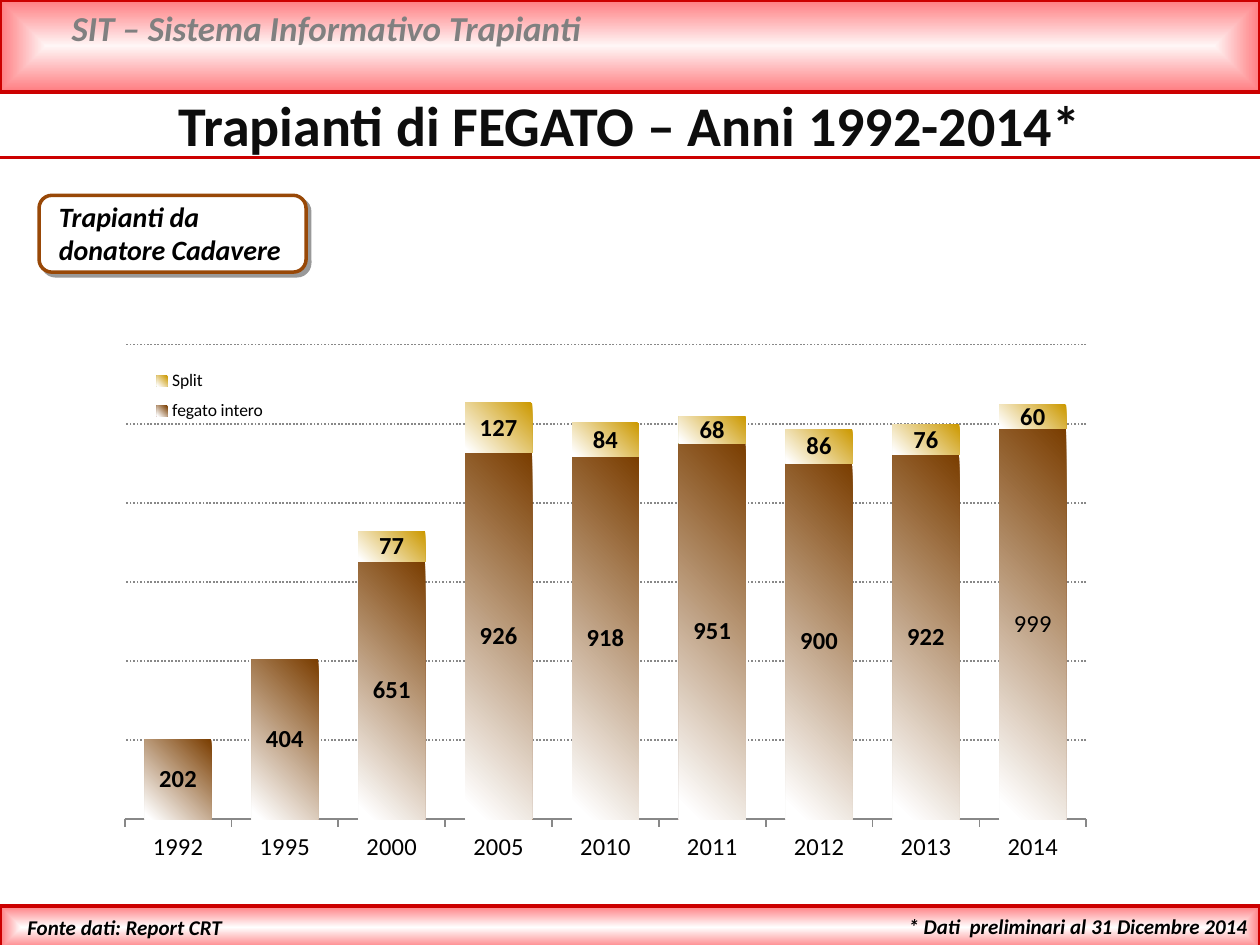
from dataclasses import dataclass

from lxml import etree
from pptx import Presentation
from pptx.chart.data import CategoryChartData
from pptx.dml.color import RGBColor
from pptx.enum.chart import XL_CHART_TYPE, XL_LEGEND_POSITION, XL_TICK_LABEL_POSITION, XL_TICK_MARK
from pptx.enum.dml import MSO_LINE
from pptx.enum.shapes import MSO_CONNECTOR, MSO_SHAPE
from pptx.enum.text import MSO_ANCHOR, PP_ALIGN
from pptx.oxml import parse_xml
from pptx.oxml.ns import nsdecls, qn
from pptx.util import Pt

LEFT, CENTER, RIGHT = PP_ALIGN.LEFT, PP_ALIGN.CENTER, PP_ALIGN.RIGHT
RECTANGLE, ROUNDED = MSO_SHAPE.RECTANGLE, MSO_SHAPE.ROUNDED_RECTANGLE
WIDTH, HEIGHT = 720, 540


@dataclass(frozen=True)
class Theme:
    font: str = "Calibri"
    black: str = "000000"
    white: str = "FFFFFF"
    title: str = "0D0D0D"
    heading: str = "808080"
    red: str = "CC0000"
    pink: str = "FF7C80"
    pale_pink: str = "FFF6F6"
    tag_line: str = "984807"
    grid: str = "888888"
    brown: str = "7A3D00"
    gold: str = "CC9900"
    title_size: int = 32
    heading_size: int = 20
    tag_size: int = 16
    label_size: int = 14
    note_size: int = 12
    legend_size: int = 10


@dataclass(frozen=True)
class Box:
    left: float
    top: float
    width: float
    height: float

    def lengths(self) -> tuple:
        return Pt(self.left), Pt(self.top), Pt(self.width), Pt(self.height)


@dataclass(frozen=True)
class Band:
    box: Box
    middle: str


@dataclass(frozen=True)
class Caption:
    text: str
    box: Box
    size: int
    color: str
    align: int = LEFT


@dataclass(frozen=True)
class Series:
    name: str
    values: tuple
    color: str


THEME = Theme()
BANDS = (
    Band(Box(0, 0, WIDTH, 52.5), THEME.pale_pink),
    Band(Box(0, 517.7, WIDTH, 24.5), THEME.white),
)
CAPTIONS = (
    Caption("SIT – Sistema Informativo Trapianti", Box(33.8, 0, 646.6, 31.7),
            THEME.heading_size, THEME.heading),
    Caption("* Dati  preliminari al 31 Dicembre 2014", Box(422.6, 518.4, 297.4, 21.6),
            THEME.note_size, THEME.black, RIGHT),
    Caption("Fonte dati: Report CRT", Box(8.6, 519.1, 231, 21.6),
            THEME.note_size, THEME.black),
    Caption("Trapianti da donatore Cadavere", Box(26.6, 110.2, 145.4, 46),
            THEME.tag_size, THEME.black),
)
YEARS = ("1992", "1995", "2000", "2005", "2010", "2011", "2012", "2013", "2014")
SERIES = (
    Series("fegato intero", (202, 404, 651, 926, 918, 951, 900, 922, 988), THEME.brown),
    Series("Split", (None, None, 77, 127, 84, 68, 86, 76, 60), THEME.gold),
)


def rgb(color: str) -> RGBColor:
    return RGBColor.from_string(color)


def style_font(font, size: int, color: str = THEME.black, bold: bool = False,
               italic: bool = False) -> None:
    font.name, font.size, font.bold, font.italic = THEME.font, Pt(size), bold, italic
    font.color.rgb = rgb(color)


def write_text(shape, text: str, *, size: int, color: str, align: int = LEFT,
               italic: bool = False, anchor=MSO_ANCHOR.TOP) -> None:
    frame = shape.text_frame
    frame.word_wrap, frame.vertical_anchor = True, anchor
    paragraph = frame.paragraphs[0]
    paragraph.alignment = align
    run = paragraph.add_run()
    run.text = text
    style_font(run.font, size, color, True, italic)


def style_line(line, color: str, width: float) -> None:
    line.color.rgb, line.width = rgb(color), Pt(width)


def fill_gradient(fill, start: str, end: str, end_position: float = 1) -> None:
    fill.gradient()
    fill.gradient_angle = 225
    for stop, color, position in zip(fill.gradient_stops, (start, end), (0, end_position)):
        stop.color.rgb, stop.position = rgb(color), position


def add_band(slide, band: Band) -> None:
    shape = slide.shapes.add_shape(RECTANGLE, *band.box.lengths())
    shape.shadow.inherit = False
    style_line(shape.line, THEME.red, 2)
    fill_gradient(shape.fill, band.middle, THEME.pink)
    # Spread the gradient from the centre of the band
    gradient = shape._element.spPr.find(qn("a:gradFill"))
    gradient.replace(gradient.find(qn("a:lin")), parse_xml(
        f'<a:path {nsdecls("a")} path="shape">'
        '<a:fillToRect l="50000" t="50000" r="50000" b="50000"/></a:path>'))


def add_rule(slide, top: float) -> None:
    rule = slide.shapes.add_connector(MSO_CONNECTOR.STRAIGHT, Pt(0), Pt(top), Pt(WIDTH), Pt(top))
    style_line(rule.line, THEME.red, 2)
    etree.SubElement(rule._element.spPr, qn("a:effectLst"))


def add_tag(slide, box: Box) -> None:
    tag = slide.shapes.add_shape(ROUNDED, *box.lengths())
    tag.fill.solid()
    tag.fill.fore_color.rgb = rgb(THEME.white)
    style_line(tag.line, THEME.tag_line, 2)
    tag.shadow.inherit = False
    tag._element.spPr.find(qn("a:effectLst")).append(parse_xml(
        f'<a:outerShdw {nsdecls("a")} blurRad="0" dist="{Pt(3)}" dir="2700000" algn="tl" '
        f'rotWithShape="0"><a:srgbClr val="{THEME.black}"><a:alpha val="40000"/></a:srgbClr>'
        '</a:outerShdw>'))


def place_in_chart(element, index: int, area: Box, target: str = "") -> None:
    """Set a manual layout, in fractions of the chart."""
    for layout in element.findall(qn("c:layout")):
        element.remove(layout)
    element.insert(index, parse_xml(
        f'<c:layout {nsdecls("c")}><c:manualLayout>{target}'
        '<c:xMode val="edge"/><c:yMode val="edge"/>'
        f'<c:x val="{area.left}"/><c:y val="{area.top}"/>'
        f'<c:w val="{area.width}"/><c:h val="{area.height}"/></c:manualLayout></c:layout>'))


def add_transplant_chart(slide, box: Box) -> None:
    data = CategoryChartData()
    data.categories = YEARS
    for entry in SERIES:
        data.add_series(entry.name, entry.values)
    chart = slide.shapes.add_chart(XL_CHART_TYPE.COLUMN_STACKED, *box.lengths(), data).chart
    chart.has_title = False
    style_font(chart.font, THEME.legend_size)

    # Axes and gridlines
    years = chart.category_axis
    years.major_tick_mark, years.has_major_gridlines = XL_TICK_MARK.OUTSIDE, False
    years.tick_label_position = XL_TICK_LABEL_POSITION.LOW
    style_font(years.tick_labels.font, THEME.label_size)
    style_line(years.format.line, THEME.grid, 1)
    counts = chart.value_axis
    counts.minimum_scale, counts.maximum_scale, counts.major_unit = 0, 1200, 200
    counts.visible, counts.has_major_gridlines = False, True
    style_line(counts.major_gridlines.format.line, THEME.grid, 1)
    counts.major_gridlines.format.line.dash_style = MSO_LINE.ROUND_DOT

    # Columns and value labels
    plot = chart.plots[0]
    plot.gap_width, plot.overlap, plot.vary_by_categories = 60, 100, False
    for series, entry in zip(plot.series, SERIES):
        fill_gradient(series.format.fill, entry.color, THEME.white, 0.96)
        series.data_labels.show_value = True
        style_font(series.data_labels.font, THEME.label_size, bold=True)
    last_label = plot.series[0].points[len(YEARS) - 1].data_label.text_frame
    run = last_label.paragraphs[0].add_run()
    run.text = "999"
    style_font(run.font, THEME.label_size)

    # Legend over the plot
    chart.has_legend = True
    chart.legend.position = XL_LEGEND_POSITION.LEFT
    chart.legend.include_in_layout = True
    place_in_chart(chart.legend._element, 1, Box(0.04, 0.05, 0.13, 0.13))
    place_in_chart(chart._chartSpace.chart.plotArea, 0, Box(0.02, 0.02, 0.96, 0.88),
                   '<c:layoutTarget val="inner"/>')


def main() -> None:
    presentation = Presentation()
    presentation.slide_width, presentation.slide_height = Pt(WIDTH), Pt(HEIGHT)
    slide = presentation.slides.add_slide(presentation.slide_layouts[5])

    # Title
    title = slide.shapes.title
    title.left, title.top, title.width, title.height = Box(0, 48.2, WIDTH, 46).lengths()
    write_text(title, "Trapianti di FEGATO – Anni 1992-2014*", size=THEME.title_size,
               color=THEME.title, align=CENTER, anchor=MSO_ANCHOR.MIDDLE)

    # Frame, chart and tag
    for band in BANDS:
        add_band(slide, band)
    add_rule(slide, 90)
    add_transplant_chart(slide, Box(59.8, 190.8, 572.4, 308.2))
    add_tag(slide, Box(22.3, 111.6, 152.6, 43.9))

    # Captions
    for caption in CAPTIONS:
        write_text(slide.shapes.add_textbox(*caption.box.lengths()), caption.text,
                   size=caption.size, color=caption.color, align=caption.align, italic=True)
    presentation.save("out.pptx")


if __name__ == "__main__":
    main()
